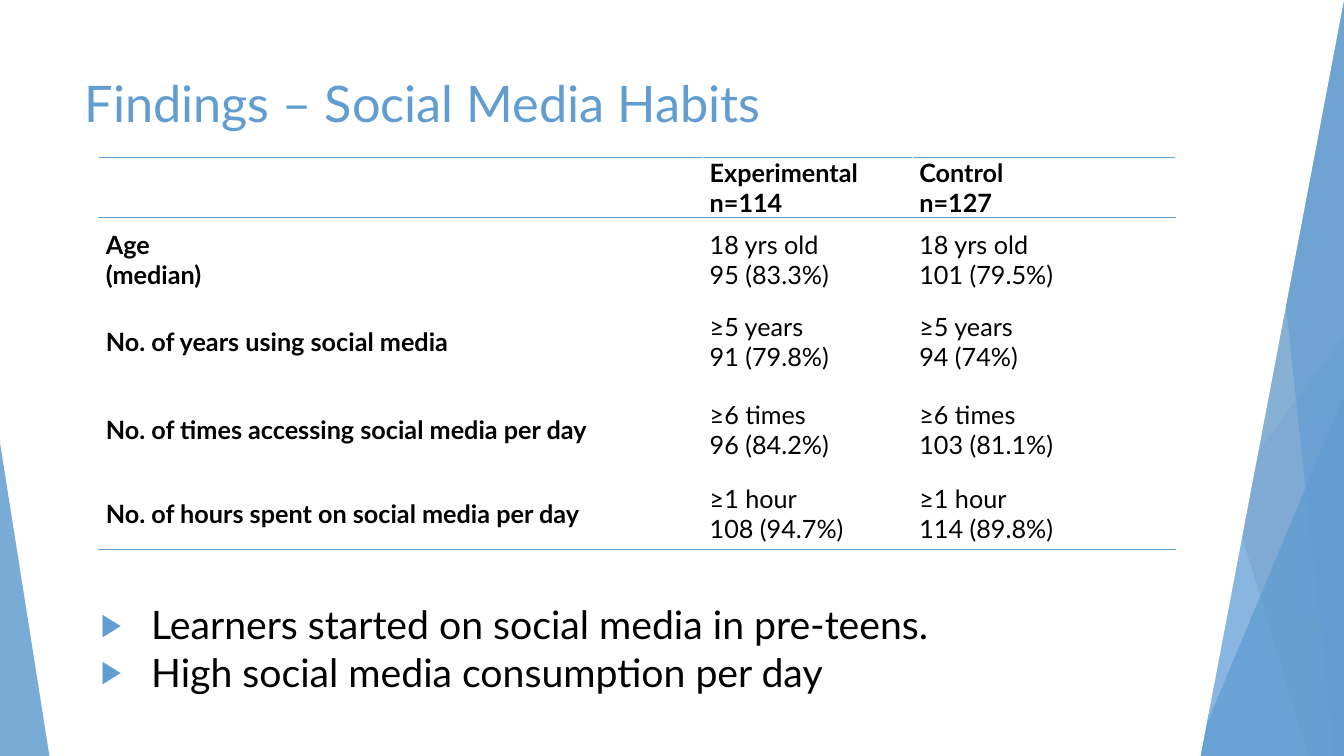
"""Build a slide of social media findings with a table and two takeaways."""
import pptx
import pptx.dml.color
import pptx.enum.shapes
import pptx.enum.text
import pptx.oxml
import pptx.oxml.ns
import pptx.util

RGB = pptx.dml.color.RGBColor
BLUE = RGB(0x62, 0x9D, 0xD1)
BRIGHT = RGB(0x29, 0x7F, 0xD5)
DEEP = RGB(0x1F, 0x5F, 0xA0)
PALE = RGB(0xA1, 0xC4, 0xE3)
WHITE = RGB(0xFF, 0xFF, 0xFF)
BLACK = RGB(0x00, 0x00, 0x00)

ROWS = [
    ("", "Experimental\nn=114", "Control\nn=127"),
    ("Age\n(median)", "18 yrs old\n95 (83.3%)", "18 yrs old\n101 (79.5%)"),
    ("No. of years using social media", "≥5 years\n91 (79.8%)", "≥5 years\n94 (74%)"),
    ("No. of times accessing social media per day", "≥6 times\n96 (84.2%)", "≥6 times\n103 (81.1%)"),
    ("No. of hours spent on social media per day", "≥1 hour\n108 (94.7%)", "≥1 hour\n114 (89.8%)"),
]
POINTS = "Learners started on social media in pre-teens.\nHigh social media consumption per day"


def write(frame, text, size=18, color=BLACK, bold=False, font="Lato", level=0):
    """Fill a text frame, one paragraph a line, and return the paragraphs."""
    frame.text = text
    for para in frame.paragraphs:
        para.level = level
        para.alignment = pptx.enum.text.PP_ALIGN.LEFT
        para.line_spacing = 1.0
        para.space_before = para.space_after = pptx.util.Pt(0)
        for run in para.runs:
            run.font.name, run.font.size = font, pptx.util.Pt(size)
            run.font.bold, run.font.color.rgb = bold, color
    return frame.paragraphs


def add_xml(parent, tag, inner="", **attrs):
    """Append a drawing element to a parent element."""
    pairs = " ".join(f'{key}="{val}"' for key, val in attrs.items())
    space = pptx.oxml.ns.nsdecls("a")
    parent.append(pptx.oxml.parse_xml(f"<a:{tag} {space} {pairs}>{inner}</a:{tag}>"))


class Deck:
    """Hold the style and the slide, with lengths as percent of its size."""

    def __init__(self):
        """Open a deck with one slide of title and body."""
        self.prs = pptx.Presentation()
        self.prs.slide_width = pptx.util.Inches(13.33)
        self.prs.slide_height = pptx.util.Inches(7.5)
        self.slide = self.prs.slides.add_slide(self.prs.slide_layouts[1])

    def wide(self, share):
        """Turn a share of the width into a length."""
        return int(self.prs.slide_width * share / 100)

    def high(self, share):
        """Turn a share of the height into a length."""
        return int(self.prs.slide_height * share / 100)

    def box(self, left, top, width, height):
        """Turn four shares into a place and size."""
        return self.wide(left), self.high(top), self.wide(width), self.high(height)

    def paint(self, shape, color, alpha):
        """Give a shape a plain fill with the given opacity."""
        shape.shadow.inherit = False
        shape.line.fill.background()
        shape.fill.solid()
        shape.fill.fore_color.rgb = color
        if alpha < 100:
            tone = shape.element.find(".//" + pptx.oxml.ns.qn("a:srgbClr"))
            add_xml(tone, "alpha", val=alpha * 1000)

    def band(self, top, base, color, alpha=100, right=100):
        """Draw a full-height band from its left edges to the right side."""
        spots = [(100, 0), (right, 100), (base, 100)]
        form = self.slide.shapes.build_freeform(self.wide(top), 0, scale=1.0)
        form.add_line_segments([(self.wide(x), self.high(y)) for x, y in spots])
        self.paint(form.convert_to_shape(), color, alpha)

    def wedge(self, left, top, width, tip, color, alpha):
        """Draw a triangle that stands on the foot of the slide."""
        kind = pptx.enum.shapes.MSO_SHAPE.ISOSCELES_TRIANGLE
        shape = self.slide.shapes.add_shape(kind, *self.box(left, top, width, 100 - top))
        shape.adjustments[0] = tip
        self.paint(shape, color, alpha)

    def place(self, index, area, text, **look):
        """Move a placeholder to the front, fill it and return its paragraphs."""
        shape = self.slide.placeholders[index]
        shape.left, shape.top, shape.width, shape.height = self.box(*area)
        shape.element.getparent().append(shape.element)
        frame = shape.text_frame
        frame.word_wrap = True
        frame.auto_size = pptx.enum.text.MSO_AUTO_SIZE.NONE
        frame.vertical_anchor = pptx.enum.text.MSO_ANCHOR.TOP
        return write(frame, text, **look)

    def title(self, area, text):
        """Set the slide title."""
        self.place(0, area, text, size=36, color=BLUE)

    def bullets(self, area, text):
        """Set the list with blue arrow bullets."""
        for para in self.place(1, area, text, size=28, level=1):
            props = para._p.get_or_add_pPr()
            props.set("marL", str(pptx.util.Inches(1)))
            props.set("indent", str(pptx.util.Inches(-0.5)))
            add_xml(props, "buClr", f'<a:srgbClr val="{BLUE}"/>')
            add_xml(props, "buSzPct", val=80000)
            add_xml(props, "buChar", char="▶")

    def edge(self, cell, side, color):
        """Draw one border of a cell."""
        fill = f'<a:solidFill><a:srgbClr val="{color}"/></a:solidFill>'
        add_xml(cell._tc.get_or_add_tcPr(), "ln" + side, fill, w=pptx.util.Pt(1))

    def table(self, left, top, widths, heights, rows):
        """Draw the table with rules around its head and at its foot."""
        area = self.box(left, top, sum(widths), sum(heights))
        grid = self.slide.shapes.add_table(len(rows), len(widths), *area).table
        grid.first_row = grid.horz_banding = False
        for col, width in zip(grid.columns, widths):
            col.width = self.wide(width)
        for row, height in zip(grid.rows, heights):
            row.height = self.high(height)
        last = len(rows) - 1
        for r, row in enumerate(rows):
            for c, text in enumerate(row):
                cell = grid.cell(r, c)
                cell.margin_left = cell.margin_right = pptx.util.Inches(0.07)
                cell.margin_top = cell.margin_bottom = 0
                anchor = pptx.enum.text.MSO_ANCHOR
                cell.vertical_anchor = anchor.MIDDLE if r else anchor.TOP
                write(cell.text_frame, text, bold=r == 0 or c == 0)
                self.edge(cell, "L", WHITE)
                self.edge(cell, "R", WHITE)
                self.edge(cell, "T", BLUE if r < 2 else WHITE)
                self.edge(cell, "B", BLUE if r in (0, last) else WHITE)
                cell.fill.background()


def main():
    """Build and save the slide."""
    deck = Deck()
    deck.band(93.3, 78.98, BLUE, 30)
    deck.band(80.78, 89.78, BLUE, 20)
    deck.wedge(76.8, 44.4, 23.2, 1, BRIGHT, 72)
    deck.band(80.4, 97.35, DEEP, 70)
    deck.band(97.88, 89.48, PALE, 70)
    deck.band(93.23, 99.3, BLUE, 65)
    deck.wedge(88.8, 52.4, 11.2, 1, BLUE, 80)
    deck.wedge(0, 58.53, 3.68, 0, BLUE, 85)
    deck.band(65.4, 65.4, WHITE, right=89.33)
    deck.title((5.55, 8.93, 70.5, 10.13), "Findings – Social Media Habits")
    deck.table(7.35, 20.8, (44.93, 15.6, 19.58), (7.73, 11.2, 10.4, 12.93, 9.33), ROWS)
    deck.bullets((3, 78.8, 84.5, 13.87), POINTS)
    deck.prs.save("out.pptx")


if __name__ == "__main__":
    main()
